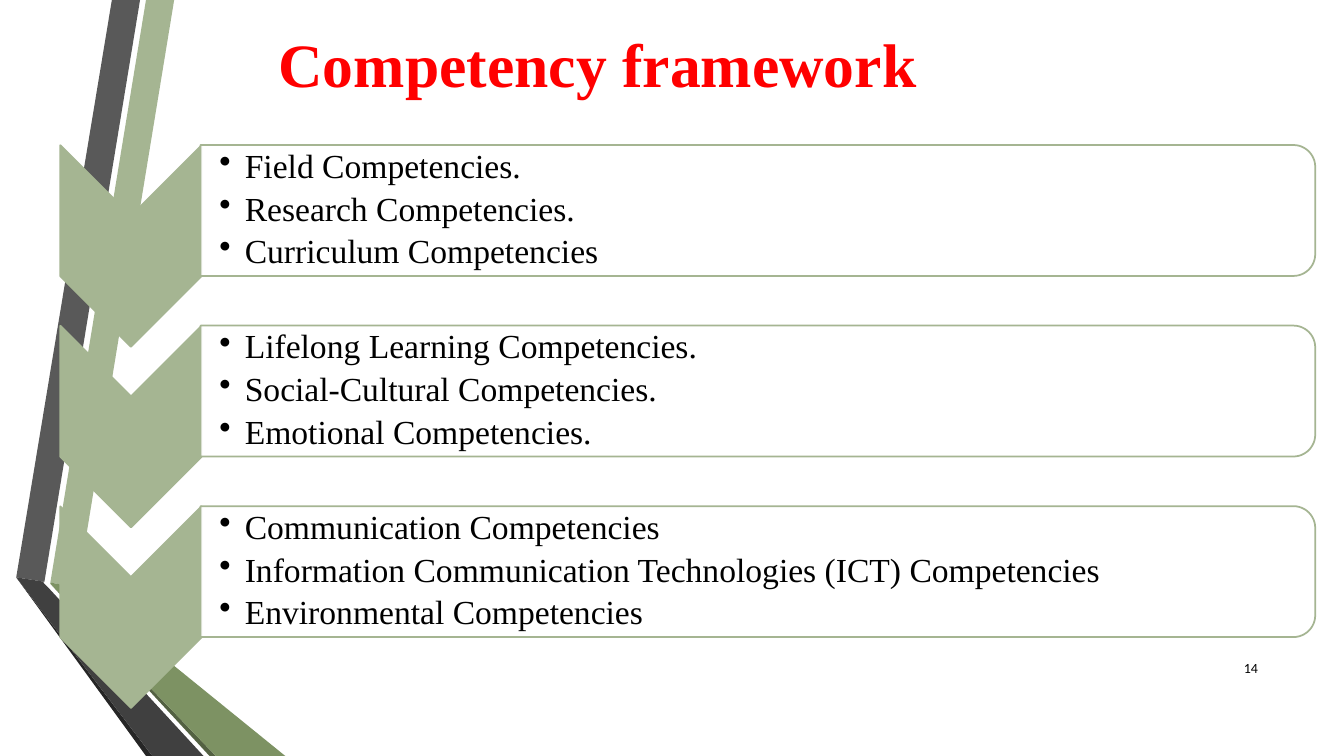
"""Builds the competency framework slide."""
import pptx
import pptx.dml.color
import pptx.enum.shapes
import pptx.enum.text
import pptx.oxml.ns
import pptx.util
from lxml import etree

Cm, Pt = pptx.util.Cm, pptx.util.Pt
SHAPE = pptx.enum.shapes.MSO_SHAPE
ALIGN = pptx.enum.text.PP_ALIGN
MIDDLE = pptx.enum.text.MSO_ANCHOR.MIDDLE
qn = pptx.oxml.ns.qn

COLORS = {
    "sage": "A5B592", "moss": "7D9263", "dark moss": "536142",
    "gray": "595959", "charcoal": "404040", "soot": "262626",
    "white": "FFFFFF", "black": "000000", "red": "FF0000",
}

RIBBONS = [
    ("sage", [(1.27, 14.68), (1.96, 14.81), (4.39, 0), (3.68, 0)]),
    ("gray", [(3.53, 0), (2.82, 0), (0.41, 14.55), (1.12, 14.66)]),
    ("soot", [(0.41, 14.55), (3.68, 19.05), (3.84, 19.05)]),
    ("dark moss", [(1.27, 14.71), (5.28, 19.05), (5.44, 19.05)]),
    ("moss", [(1.27, 14.71), (5.44, 19.05), (7.19, 19.05), (1.96, 14.81),
              (1.27, 14.68)]),
    ("charcoal", [(5.13, 19.05), (1.22, 14.81), (1.09, 14.68), (1.12, 14.66),
                  (0.41, 14.55), (3.84, 19.05)]),
]

COMPETENCIES = [
    ["Field Competencies.", "Research Competencies.",
     "Curriculum Competencies"],
    ["Lifelong Learning Competencies.", "Social-Cultural Competencies.",
     "Emotional Competencies."],
    ["Communication Competencies",
     "Information Communication Technologies (ICT) Competencies",
     "Environmental Competencies"],
]
ROW_PITCH = 4.55


class SlideStyle:
    """Holds the look and the current slide and draws each kind of element."""

    serif = "Times New Roman"
    sans = "Calibri"

    def __init__(self, slide):
        self.slide = slide

    def color(self, name):
        return pptx.dml.color.RGBColor.from_string(COLORS[name])

    def paint(self, shape, fill, line=None):
        shape.shadow.inherit = False
        shape.fill.solid()
        shape.fill.fore_color.rgb = self.color(fill)
        if line:
            shape.line.color.rgb = self.color(line)
            shape.line.width = Pt(1.25)
        else:
            shape.line.fill.background()

    def fill_text(self, frame, text, size, font, color="black", bold=False,
                  align=ALIGN.LEFT):
        frame.word_wrap = True
        frame.vertical_anchor = MIDDLE
        frame.text = text
        for paragraph in frame.paragraphs:
            paragraph.alignment = align
            for run in paragraph.runs:
                run.font.size = Pt(size)
                run.font.name = font
                run.font.bold = bold
                run.font.color.rgb = self.color(color)

    def title(self, text, *box):
        heading = self.slide.shapes.title
        heading.left, heading.top, heading.width, heading.height = map(Cm, box)
        self.fill_text(heading.text_frame, text, 44, self.serif, "red", True,
                       ALIGN.CENTER)

    def ribbon(self, color, points):
        start, *corners = [(Cm(x), Cm(y)) for x, y in points]
        outline = self.slide.shapes.build_freeform(*start)
        outline.add_line_segments(corners, close=True)
        self.paint(outline.convert_to_shape(), color)

    def turned(self, preset, fill, *box):
        shape = self.slide.shapes.add_shape(preset, *map(Cm, box))
        shape.rotation = 90
        self.paint(shape, fill, "sage")
        return shape

    def chevron(self, *box):
        self.turned(SHAPE.CHEVRON, "sage", *box)

    def panel(self, *box):
        panel = self.turned(SHAPE.ROUND_2_SAME_RECTANGLE, "white", *box)
        fill = panel._element.spPr.find(qn("a:solidFill"))
        etree.SubElement(fill[0], qn("a:alpha"), val="90000")

    def bullets(self, lines, *box):
        frame = self.slide.shapes.add_textbox(*map(Cm, box)).text_frame
        self.fill_text(frame, "\n".join(lines), 24, self.serif)
        frame.margin_left = Cm(0.48)
        frame.margin_top = frame.margin_right = frame.margin_bottom = Cm(0.05)
        for paragraph in frame.paragraphs:
            paragraph.level = 1
            paragraph.line_spacing = 0.9
            paragraph.space_after = Pt(4.5)
            properties = paragraph._p.get_or_add_pPr()
            properties.set("marL", str(Cm(0.64)))
            properties.set("indent", str(Cm(-0.64)))
            etree.SubElement(properties, qn("a:buChar"), char="•")

    def page_number(self, text, *box):
        frame = self.slide.shapes.add_textbox(*map(Cm, box)).text_frame
        self.fill_text(frame, text, 10, self.sans, align=ALIGN.RIGHT)


def main():
    deck = pptx.Presentation()
    deck.slide_width, deck.slide_height = Cm(33.87), Cm(19.05)
    style = SlideStyle(deck.slides.add_slide(deck.slide_layouts[5]))

    for color, points in RIBBONS:
        style.ribbon(color, points)
    style.title("Competency framework", 1.5, 0.53, 27.13, 2.13)
    for row, lines in enumerate(COMPETENCIES):
        drop = row * ROW_PITCH
        style.chevron(0.76, 4.42 + drop, 5.08, 3.56)
        style.panel(17.45, -8.74 + drop, 3.3, 28.09)
        style.bullets(lines, 5.05, 3.81 + drop, 27.91, 2.97)
    style.page_number("14", 30.43, 16.31, 1.52, 1.02)
    deck.save("out.pptx")


if __name__ == "__main__":
    main()
